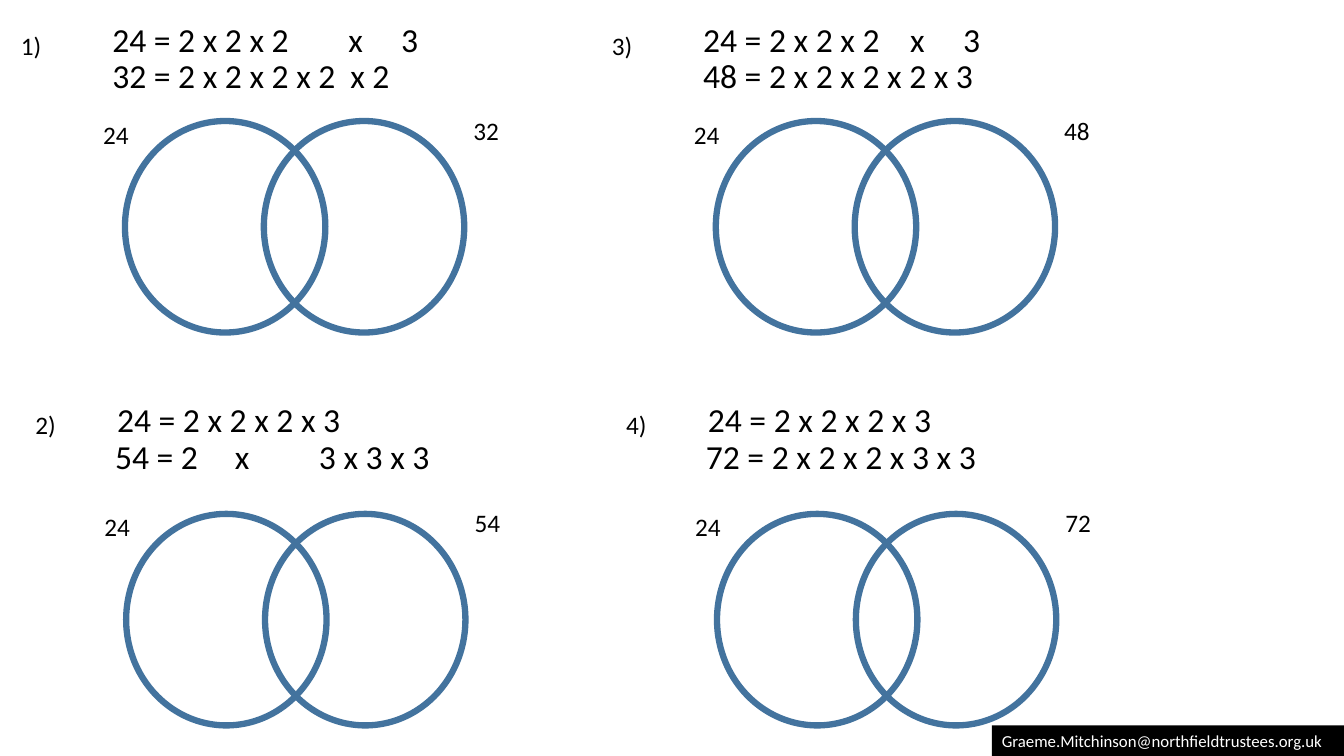
from lxml import etree
from pptx import Presentation
from pptx.dml.color import RGBColor
from pptx.enum.shapes import MSO_SHAPE
from pptx.enum.text import MSO_ANCHOR, PP_ALIGN
from pptx.oxml.ns import qn
from pptx.util import Cm, Pt

OVAL, RECT = MSO_SHAPE.OVAL, MSO_SHAPE.RECTANGLE
TOP, LEFT = MSO_ANCHOR.TOP, PP_ALIGN.LEFT
BLUE = RGBColor(0x43, 0x73, 0x9E)
BLACK = RGBColor(0, 0, 0)
WHITE = RGBColor(255, 255, 255)


def write(shape, text, size, color=BLACK, tabs=()):
    """Put one line into the shape, with tab stops given in cm."""
    frame = shape.text_frame
    frame.word_wrap = True
    frame.vertical_anchor = TOP
    para = frame.paragraphs[0]
    para.alignment = LEFT
    if tabs:
        stops = etree.SubElement(para._p.get_or_add_pPr(), qn("a:tabLst"))
        for stop in tabs:
            etree.SubElement(stops, qn("a:tab"), pos=str(Cm(stop)), algn="l")
    run = para.add_run()
    run.text = text
    run.font.name = "Calibri"
    run.font.size = Pt(size)
    run.font.color.rgb = color


def label(x, y, text):
    box = slide.shapes.add_textbox(Cm(x), Cm(y), Cm(1.5), Cm(1.03))
    write(box, text, 18)


deck = Presentation()
deck.slide_width, deck.slide_height = Cm(33.87), Cm(19.05)
slide = deck.slides.add_slide(deck.slide_layouts[6])

COL = 14.89  # step between the two columns
STEP = 3.5  # step between the two circles of a pair

# Places in the left column: number, the two sums, first circle
ROWS = [
    ((0.28, 0.64), ((2.58, 0.36), (2.58, 1.27)), (3.15, 3.05)),
    ((0.64, 10.19), ((2.7, 9.93), (2.65, 10.87)), (3.18, 12.95)),
]

# Right-hand number, then each sum with its tab stops
TASKS = [
    ("32", (("24 = 2 x 2 x 2\tx\t3", (5.95, 7.28)),
            ("32 = 2 x 2 x 2 x 2\tx 2", (6,)))),
    ("54", (("24 = 2 x 2 x 2 x 3", ()),
            ("54 = 2\tx\t3 x 3 x 3", (3.02, 5.14)))),
    ("48", (("24 = 2 x 2 x 2\tx\t3", (5.22, 6.55)),
            ("48 = 2 x 2 x 2 x 2 x 3", ()))),
    ("72", (("24 = 2 x 2 x 2 x 3", ()),
            ("72 = 2 x 2 x 2 x 3 x 3", ()))),
]

for i, (right, sums) in enumerate(TASKS):
    col, row = divmod(i, 2)
    shift = col * COL
    (num_x, num_y), spots, (venn_x, venn_y) = ROWS[row]
    venn_x += shift

    for k in range(2):
        ring = slide.shapes.add_shape(
            OVAL, Cm(venn_x + k * STEP), Cm(venn_y), Cm(5.05), Cm(5.33))
        ring.shadow.inherit = False
        ring.fill.background()
        ring.line.color.rgb = BLUE
        ring.line.width = Pt(4.5)

    for (x, y), (text, tabs) in zip(spots, sums):
        box = slide.shapes.add_textbox(
            Cm(x + shift), Cm(y), Cm(10), Cm(1.28))
        write(box, text, 24, tabs=tabs)

    label(num_x + shift, num_y, f"{i + 1})")
    label(venn_x - 0.8, venn_y - 0.18, "24")
    label(venn_x + 8.53, venn_y - 0.28, right)

mail = slide.shapes.add_shape(RECT, Cm(25), Cm(18.28), Cm(8.87), Cm(0.77))
mail.shadow.inherit = False
mail.fill.solid()
mail.fill.fore_color.rgb = BLACK
mail.line.fill.background()
write(mail, "Graeme.Mitchinson@northfieldtrustees.org.uk", 12, WHITE)

deck.save("out.pptx")
